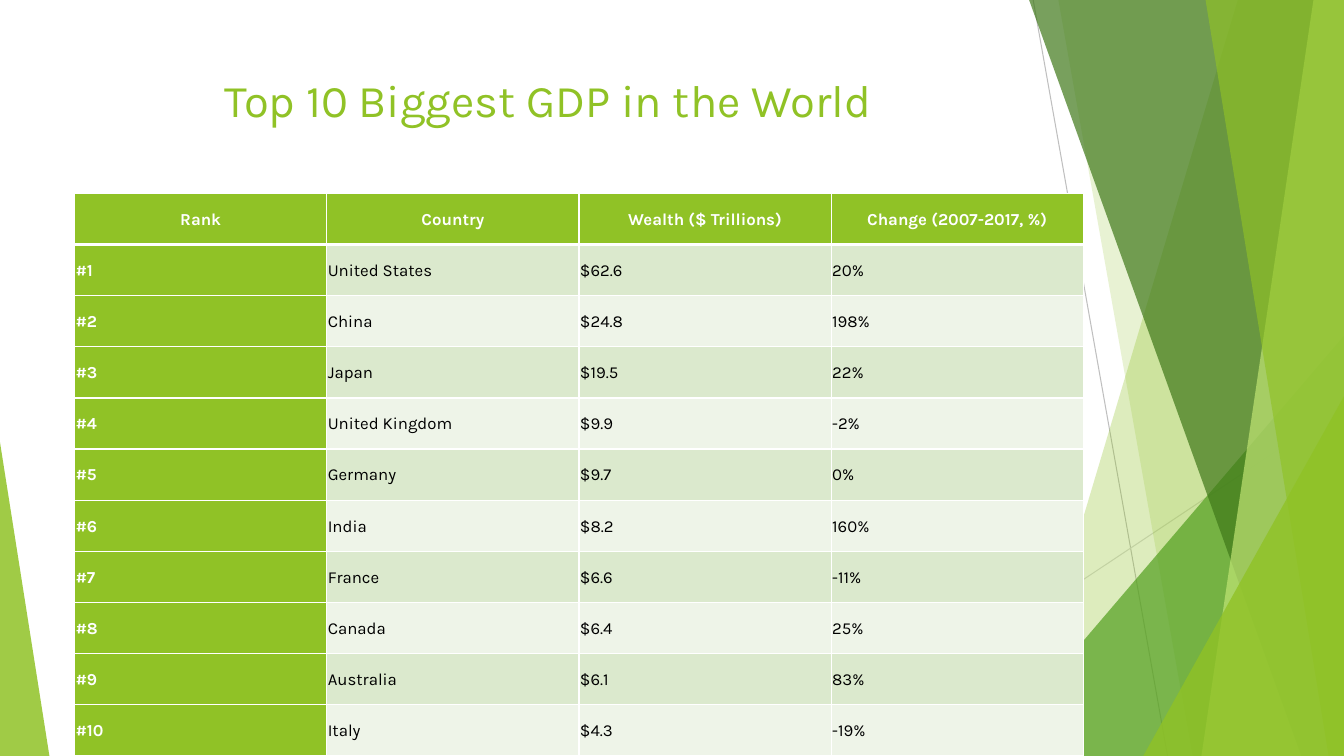
from dataclasses import dataclass
from lxml.etree import SubElement
from pptx import Presentation
from pptx.dml.color import RGBColor
from pptx.enum.shapes import MSO_CONNECTOR, MSO_SHAPE
from pptx.enum.text import MSO_ANCHOR, PP_ALIGN
from pptx.oxml.ns import qn
from pptx.util import Pt


@dataclass(frozen=True)
class Theme:
    font: str = "Karla"
    head: float = 32.4
    body: float = 12
    lime: str = "90C226"
    leaf: str = "54A021"
    pine: str = "3F7819"
    pale: str = "C0E474"
    dark: str = "DBE9CD"
    light: str = "EEF4E8"
    white: str = "FFFFFF"
    black: str = "000000"
    grey: str = "BFBFBF"
    mist: str = "D9D9D9"


THEME = Theme()
HEADS = ["Rank", "Country", "Wealth ($ Trillions)", "Change (2007-2017, %)"]
LANDS = [
    ("United States", "$62.6", "20%"),
    ("China", "$24.8", "198%"),
    ("Japan", "$19.5", "22%"),
    ("United Kingdom", "$9.9", "-2%"),
    ("Germany", "$9.7", "0%"),
    ("India", "$8.2", "160%"),
    ("France", "$6.6", "-11%"),
    ("Canada", "$6.4", "25%"),
    ("Australia", "$6.1", "83%"),
    ("Italy", "$4.3", "-19%"),
]


def put(item, values):
    for name, value in values.items():
        setattr(item, name, value)


def write(frame, text, size, color, bold, align, space):
    frame.text = text
    para = frame.paragraphs[0]
    put(para, {"alignment": align, "line_spacing": space})
    put(para.font, {"name": THEME.font, "size": Pt(size), "bold": bold})
    para.font.color.rgb = RGBColor.from_string(color)


def tint(shape, color, alpha):
    shape.fill.solid()
    shape.fill.fore_color.rgb = RGBColor.from_string(color)
    paint = next(shape.element.spPr.iter(qn("a:srgbClr")))
    SubElement(paint, qn("a:alpha"), val=str(alpha * 1000))
    shape.line.fill.background()
    shape.shadow.inherit = False


def add_ray(slide, start, end, color):
    ray = slide.shapes.add_connector(
        MSO_CONNECTOR.STRAIGHT, *[Pt(n) for n in start + end])
    ray.line.width = Pt(0.75)
    ray.line.color.rgb = RGBColor.from_string(color)
    SubElement(ray.element.spPr, qn("a:effectLst"))


def add_facet(slide, box, top, base, color, alpha):
    left, high, width, height = box
    right, low = left + width, high + height
    form = slide.shapes.build_freeform(Pt(left + top), Pt(high), scale=1.0)
    ends = [(right, high), (right, low), (left + base, low)]
    form.add_line_segments([(Pt(x), Pt(y)) for x, y in ends], close=True)
    tint(form.convert_to_shape(), color, alpha)


def add_wedge(slide, box, peak, color, alpha):
    wedge = slide.shapes.add_shape(
        MSO_SHAPE.ISOSCELES_TRIANGLE, *[Pt(n) for n in box])
    wedge.adjustments[0] = peak
    tint(wedge, color, alpha)


def add_fan(slide, box):
    left, top, width, height = box
    right, low = left + width, top + height
    add_ray(slide, (left + 38, top), (left + 134, low), THEME.grey)
    add_ray(slide, (right, top + 290), (left - 115.4, low), THEME.mist)
    add_facet(slide, box, 184.2, 22.9, THEME.lime, 30)
    add_facet(slide, box, 56, 151.8, THEME.lime, 20)
    add_wedge(slide, (left + 3.6, low - 300.2, width - 3.6, 300.2),
              1, THEME.leaf, 72)
    for top_x, base, color, alpha in [
        (35.1, 229.5, THEME.pine, 70),
        (238.2, 158.2, THEME.pale, 70),
        (161.1, 249, THEME.lime, 65),
    ]:
        add_facet(slide, box, top_x, base, color, alpha)
    add_wedge(slide, (right - 143.4, low - 257, 143.4, 257),
              1, THEME.lime, 80)


def add_title(slide, box):
    title = slide.shapes.title
    sides = ("left", "top", "width", "height")
    put(title, dict(zip(sides, [Pt(n) for n in box])))
    frame = title.text_frame
    put(frame, {"word_wrap": True, "vertical_anchor": MSO_ANCHOR.MIDDLE})
    write(frame, "Top 10 Biggest GDP in the World", THEME.head,
          THEME.lime, False, PP_ALIGN.CENTER, 1.0)


def edge(cell, row):
    wide = {"a:lnT": 3 if row == 1 else 1, "a:lnB": 3 if row == 0 else 1}
    for tag in ("a:lnL", "a:lnR", "a:lnT", "a:lnB"):
        line = SubElement(cell._tc.get_or_add_tcPr(), qn(tag),
                          w=str(Pt(wide.get(tag, 1))))
        fill = SubElement(line, qn("a:solidFill"))
        SubElement(fill, qn("a:srgbClr"), val=THEME.white)


def fill_cell(cell, row, col, text):
    strong = row == 0 or col == 0
    band = THEME.dark if row % 2 else THEME.light
    edge(cell, row)
    cell.fill.solid()
    cell.fill.fore_color.rgb = RGBColor.from_string(
        THEME.lime if strong else band)
    sides = ("left", "right", "top", "bottom")
    put(cell, {f"margin_{side}": Pt(0.72) for side in sides})
    cell.vertical_anchor = MSO_ANCHOR.MIDDLE
    write(cell.text_frame, text, THEME.body,
          THEME.white if strong else THEME.black, strong,
          PP_ALIGN.LEFT if row else PP_ALIGN.CENTER, 1.07)


def add_ranks(slide, box):
    ranks = [(f"#{n}", *land) for n, land in enumerate(LANDS, 1)]
    rows = [HEADS, *ranks]
    table = slide.shapes.add_table(
        len(rows), len(HEADS), *[Pt(n) for n in box]).table
    for col in table.columns:
        col.width = Pt(box[2] / len(HEADS))
    for line in table.rows:
        line.height = Pt(box[3] / len(rows))
    for r, row in enumerate(rows):
        for c, text in enumerate(row):
            fill_cell(table.cell(r, c), r, c, text)


def main():
    deck = Presentation()
    put(deck, {"slide_width": Pt(960), "slide_height": Pt(540)})
    slide = deck.slides.add_slide(deck.slide_layouts[5])
    add_fan(slide, (700, 0, 260, 540))
    add_wedge(slide, (0, 316, 35.3, 224), 0, THEME.lime, 85)
    add_title(slide, (53.3, 48.2, 676.8, 46))
    add_ranks(slide, (53.3, 138.2, 720.6, 401.8))
    deck.save("out.pptx")


if __name__ == "__main__":
    main()
